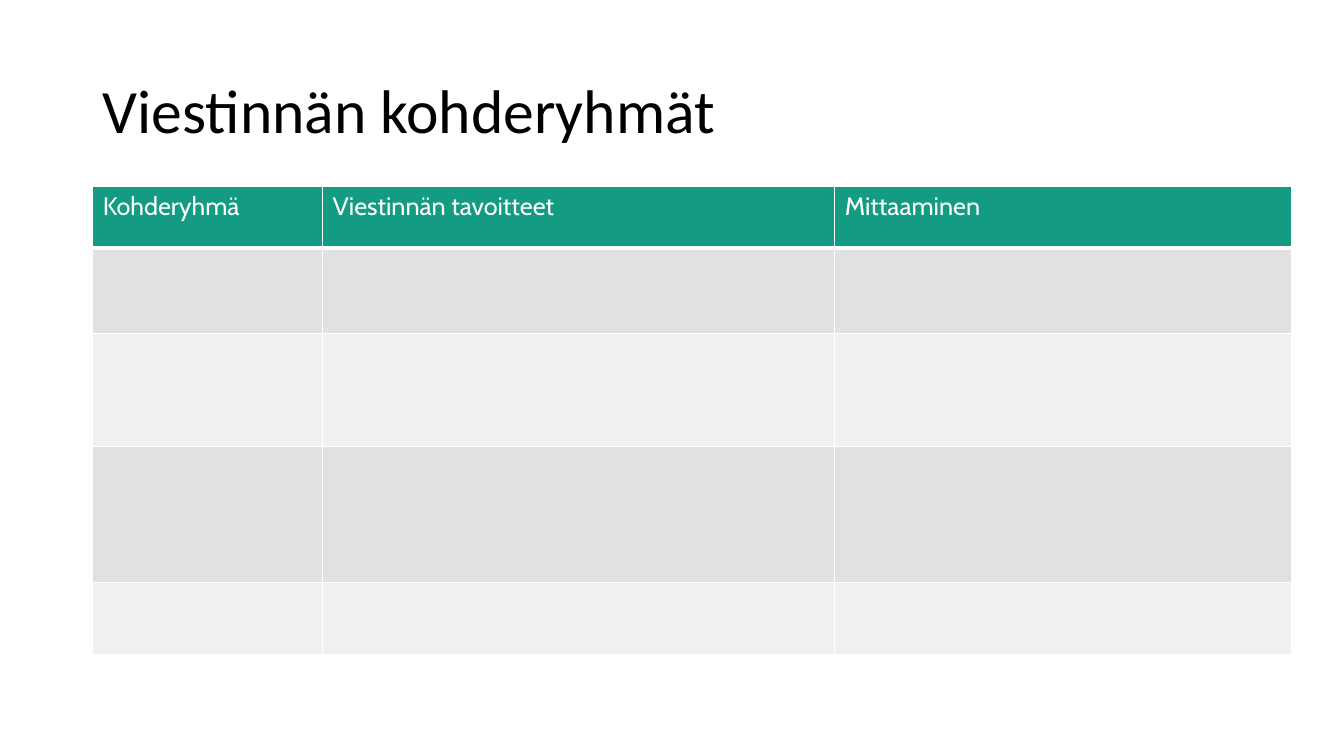
from dataclasses import dataclass
from lxml.etree import SubElement as Sub
from pptx import Presentation
from pptx.dml.color import RGBColor as Rgb
from pptx.enum.text import MSO_ANCHOR as Anchor
from pptx.oxml.ns import qn
from pptx.util import Inches, Pt


@dataclass
class Theme:
    ink: str = "000000"
    white: str = "FFFFFF"
    green: str = "139B84"
    dark: str = "E1E1E1"
    light: str = "F0F0F0"
    title: int = 44
    head: int = 18


def write(frame, text, size, font, color):
    run = frame.paragraphs[0].add_run()
    run.text = text
    run.font.size = Pt(size)
    run.font.name = font
    run.font.bold = False
    run.font.color.rgb = Rgb.from_string(color)


def edge(cell, sides):
    props = cell._tc.get_or_add_tcPr()
    for side, width in sides.items():
        line = Sub(props, qn(f"a:ln{side}"), w=str(Pt(width)))
        fill = Sub(line, qn("a:solidFill"))
        Sub(fill, qn("a:srgbClr"), val=theme.white)


theme = Theme()
deck = Presentation()
deck.slide_width = Inches(13.33)
deck.slide_height = Inches(7.5)
slide = deck.slides.add_slide(deck.slide_layouts[6])

box = slide.shapes.add_textbox(Inches(0.92), Inches(0.4), Inches(11.5), Inches(1.45))
title = box.text_frame
title.word_wrap = True
title.vertical_anchor = Anchor.MIDDLE
title.paragraphs[0].line_spacing = 0.9
write(title, "Viestinnän kohderyhmät", theme.title, "Calibri", theme.ink)

heads = ["Kohderyhmä", "Viestinnän tavoitteet", "Mittaaminen"]
widths = [2.28, 5.08, 4.53]
heights = [0.61, 0.85, 1.12, 1.35, 0.71]
fills = [theme.green] + [theme.dark, theme.light] * 2

frame = slide.shapes.add_table(
    len(heights), len(widths), Inches(0.92), Inches(1.85),
    Inches(sum(widths)), Inches(sum(heights)))
table = frame.table
for col, width in zip(table.columns, widths):
    col.width = Inches(width)
for row, height, fill in zip(table.rows, heights, fills):
    row.height = Inches(height)
    for cell in row.cells:
        edge(cell, {"L": 1, "R": 1, "T": 1, "B": 3 if fill == theme.green else 1})
        cell.fill.solid()
        cell.fill.fore_color.rgb = Rgb.from_string(fill)
for cell, text in zip(table.rows[0].cells, heads):
    write(cell.text_frame, text, theme.head, "Cabin", theme.white)

deck.save("out.pptx")
